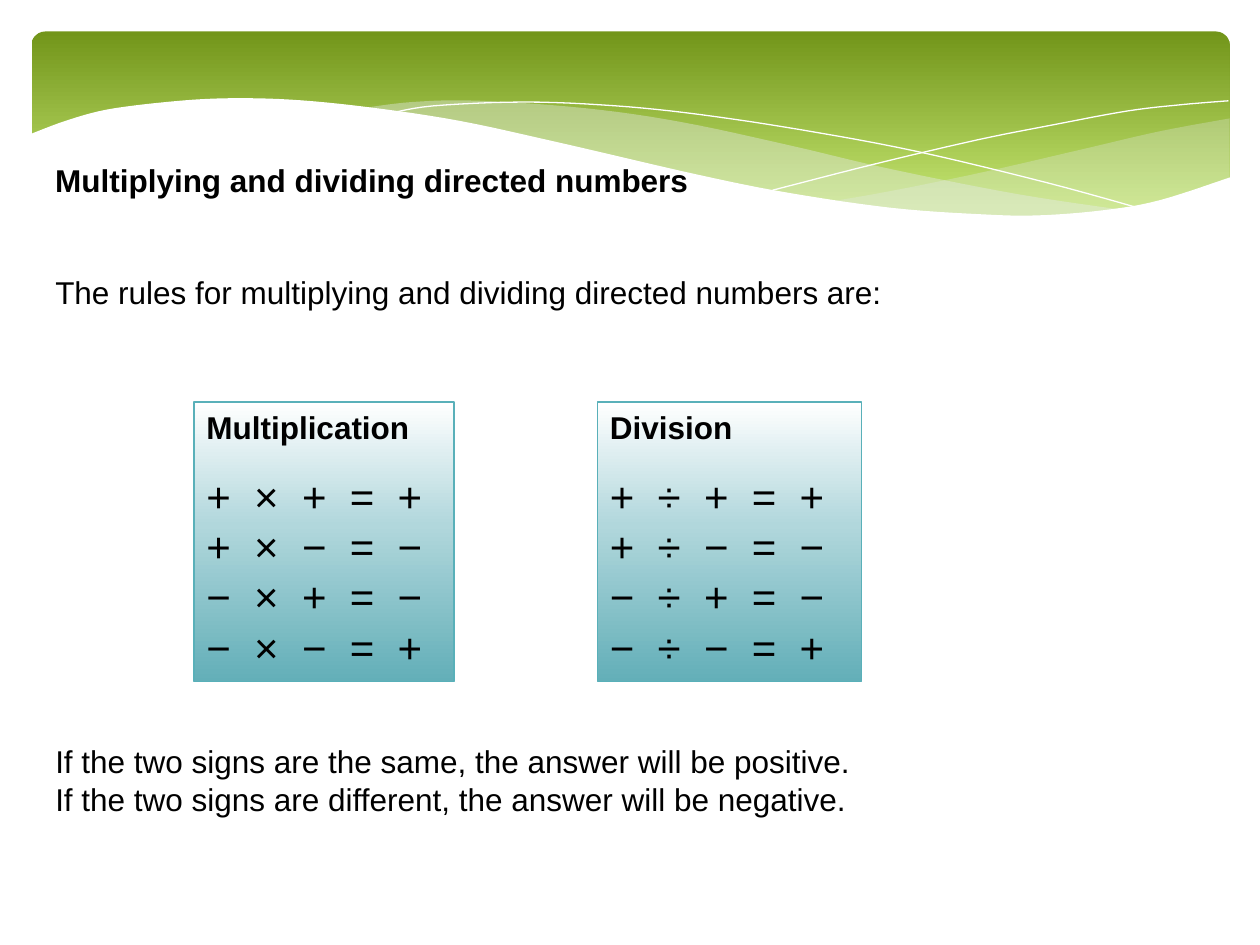
from itertools import product

from lxml import etree
from pptx import Presentation
from pptx.dml.color import RGBColor
from pptx.enum.shapes import MSO_SHAPE
from pptx.enum.text import MSO_ANCHOR, PP_ALIGN
from pptx.oxml.ns import qn
from pptx.util import Pt

RECTANGLE = MSO_SHAPE.RECTANGLE
ROUNDED = MSO_SHAPE.ROUNDED_RECTANGLE
TOP = MSO_ANCHOR.TOP
LEFT = PP_ALIGN.LEFT

BANNER_STOPS = [(0, "72951A"), (90, "C5E672")]
PANEL_STOPS = [(0, "FFFFFF"), (44, "B1D7DC"), (100, "63AFB8")]

# Curves are lists of knots in points, joined smoothly.
RIGHT_WAVE_TOP = [(702.7, 67.7), (663, 75), (620, 85), (561, 98.6),
                  (508, 109.4), (476, 115)]
RIGHT_WAVE_BOTTOM = [(476, 115), (497.5, 118), (536.4, 121.7), (570, 123.8),
                     (601, 123.8), (628, 121.7), (651.6, 117.4),
                     (673, 112.3), (702.7, 101.5)]
MIDDLE_WAVE_TOP = [(643, 120.2), (581, 110.9), (508.3, 96.5), (453, 83.5),
                   (389.5, 69.8), (334.8, 61.9), (273.6, 57.6), (236, 58.3),
                   (206, 62)]
MIDDLE_WAVE_BOTTOM = [(206, 62), (260.6, 69.8), (323.3, 83.5), (381.6, 97.2),
                      (432.7, 108), (489.6, 117.4), (538.6, 122.4),
                      (589, 124.6), (617, 123.1), (643, 120.2)]
FALLING_LINE = [(222.5, 64.8), (247.7, 60.5), (299.5, 58.3), (352, 60.5),
                (400.3, 65.5), (458, 74.2), (523.4, 86.4), (598.3, 104.4),
                (653, 119.5)]
RISING_LINE = [(441.4, 108.7), (500.4, 93.6), (558.7, 79.9), (602, 71.3),
               (644.4, 63.4), (675.4, 59.8), (702, 57.6)]
WHITE_EDGE = [(703.4, 101.2), (662.4, 114.5), (630, 120.2), (592.6, 123.1),
              (560, 122.4), (509.8, 118.8), (450.7, 110.2), (399.6, 100),
              (321.8, 82), (262.8, 69.1), (210.2, 61.2), (165.6, 56.9),
              (127.4, 56.2), (95, 58.3), (61.2, 62.6), (37.4, 69.1),
              (16.5, 77)]
WHITE_CORNERS = [(16.5, 161), (703.4, 161)]


def color(hex_text):
    return RGBColor.from_string(hex_text)


def smooth(knots, steps=6):
    """Return points on a Catmull-Rom curve through the knots."""
    padded = [knots[0], *knots, knots[-1]]
    points = [knots[0]]
    for a, b, c, d in zip(padded, padded[1:], padded[2:], padded[3:]):
        for step in range(1, steps + 1):
            t = step / steps
            points.append(tuple(
                q + t * (r - p) / 2
                + t ** 2 * (2 * p - 5 * q + 4 * r - s) / 2
                + t ** 3 * (3 * q - p - 3 * r + s) / 2
                for p, q, r, s in zip(a, b, c, d)))
    return points


def fill_gradient(shape, stops):
    """Fill from top to bottom with (percent, colour) stops."""
    shape.fill.gradient()
    shape.fill.gradient_angle = 270
    stop_list = shape.fill._xPr.find(qn("a:gradFill")).find(qn("a:gsLst"))
    for old_stop in list(stop_list):
        stop_list.remove(old_stop)
    for percent, hex_text in stops:
        stop = etree.SubElement(stop_list, qn("a:gs"), pos=str(percent * 1000))
        etree.SubElement(stop, qn("a:srgbClr"), val=hex_text)


class SlideWriter:
    def __init__(self, page, font="Arial", ink="000000", size=18):
        self.page = page
        self.font = font
        self.ink = ink
        self.size = size

    def format_para(self, para, size=None, bold=False):
        para.alignment = LEFT
        for span in para.runs:
            span.font.name = self.font
            span.font.size = Pt(size or self.size)
            span.font.bold = bold
            span.font.color.rgb = color(self.ink)

    def text(self, left, top, width, height, words, bold=False, wrap=False):
        box = self.page.shapes.add_textbox(
            Pt(left), Pt(top), Pt(width), Pt(height))
        box.text_frame.word_wrap = wrap
        box.text_frame.text = words
        for para in box.text_frame.paragraphs:
            self.format_para(para, bold=bold)

    def block(self, kind, left, top, width, height, stops, line=None):
        shape = self.page.shapes.add_shape(
            kind, Pt(left), Pt(top), Pt(width), Pt(height))
        shape.shadow.inherit = False
        fill_gradient(shape, stops)
        if line:
            shape.line.color.rgb = color(line)
            shape.line.width = Pt(0.75)
        else:
            shape.line.fill.background()
        return shape

    def outline(self, points, closed):
        start, *others = [(Pt(x), Pt(y)) for x, y in points]
        builder = self.page.shapes.build_freeform(*start)
        builder.add_line_segments(others, close=closed)
        shape = builder.convert_to_shape()
        shape.shadow.inherit = False
        return shape

    def wave(self, points, hex_text, opacity=100):
        shape = self.outline(points, closed=True)
        shape.fill.solid()
        shape.fill.fore_color.rgb = color(hex_text)
        shape.line.fill.background()
        if opacity < 100:
            tint = shape.fill._xPr.find(qn("a:solidFill"))[0]
            etree.SubElement(tint, qn("a:alpha"), val=str(opacity * 1000))

    def curve(self, knots):
        shape = self.outline(smooth(knots), closed=False)
        shape.fill.background()
        shape.line.color.rgb = color("FFFFFF")
        shape.line.width = Pt(0)

    def sign_panel(self, left, width, heading, operator):
        """Draw a panel with the sign rules of one operator."""
        panel = self.block(RECTANGLE, left, 229.7, width, 159.8,
                           PANEL_STOPS, line="59B0B9")
        rules = [f"{a}  {operator}  {b}  =  {'+' if a == b else '−'}"
                 for a, b in product("+−", repeat=2)]
        frame = panel.text_frame
        frame.vertical_anchor = TOP
        frame.text = "\n".join([heading, *rules])
        title, *rows = frame.paragraphs
        self.format_para(title, bold=True)
        for row in rows:
            self.format_para(row, size=24)
        rows[0].space_before = Pt(13.8)


def main():
    deck = Presentation()
    deck.slide_width, deck.slide_height = Pt(720), Pt(540)
    writer = SlideWriter(deck.slides.add_slide(deck.slide_layouts[6]))

    banner = writer.block(ROUNDED, 18, 18, 684.7, 112.3, BANNER_STOPS)
    banner.adjustments[0] = 0.07
    writer.wave(smooth(RIGHT_WAVE_TOP) + smooth(RIGHT_WAVE_BOTTOM),
                "E7ECED", 29)
    writer.wave(smooth(MIDDLE_WAVE_TOP) + smooth(MIDDLE_WAVE_BOTTOM),
                "E7ECED", 40)
    writer.curve(FALLING_LINE)
    writer.curve(RISING_LINE)
    writer.wave(smooth(WHITE_EDGE) + WHITE_CORNERS, "FFFFFF")

    writer.text(24.5, 88.6, 380, 29,
                "Multiplying and dividing directed numbers", bold=True)
    writer.text(24.5, 152.6, 491, 29,
                "The rules for multiplying and dividing directed numbers are:")
    writer.sign_panel(110.9, 148.5, "Multiplication", "×")
    writer.sign_panel(341.5, 150.7, "Division", "÷")
    writer.text(24.5, 420.5, 574, 51,
                "If the two signs are the same, the answer will be positive.\n"
                "If the two signs are different, the answer will be negative.",
                wrap=True)
    deck.save("out.pptx")


if __name__ == "__main__":
    main()
